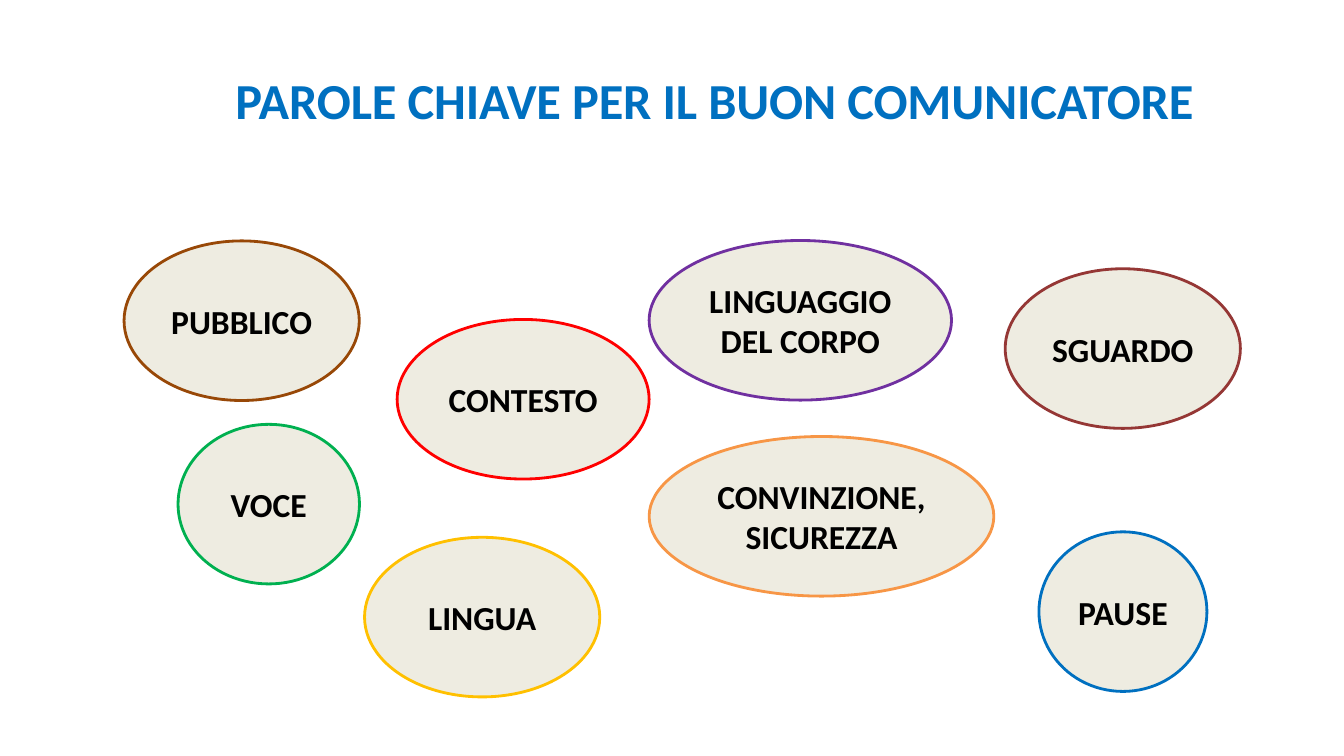
from dataclasses import dataclass

from pptx import Presentation
from pptx.dml.color import RGBColor
from pptx.enum.shapes import MSO_SHAPE
from pptx.enum.text import MSO_ANCHOR, MSO_AUTO_SIZE, PP_ALIGN
from pptx.util import Pt


@dataclass(frozen=True)
class Theme:
    font: str = "Calibri"
    title_size: int = 36
    keyword_size: int = 24
    outline_width: int = 2
    title_color: str = "0070C0"
    keyword_color: str = "000000"
    bubble_fill: str = "EEECE1"


THEME = Theme()
BUBBLE_HEIGHT = 114
KEYWORDS = [
    ("PUBBLICO", 88.6, 172.1, 168, "984807"),
    ("CONTESTO", 283.7, 228.2, 180, "FF0000"),
    ("VOCE", 127.2, 303.1, 129.6, "00B050"),
    ("LINGUAGGIO DEL CORPO", 463.7, 171.8, 216, "7030A0"),
    ("LINGUA", 260.4, 383.8, 168, "FFC000"),
    ("PAUSE", 742.1, 379.9, 120, "0070C0"),
    ("CONVINZIONE, SICUREZZA", 463.7, 311.8, 246.2, "F79646"),
    ("SGUARDO", 718, 192, 168, "953735"),
]


def apply_format(target, values):
    for name, value in values.items():
        setattr(target, name, value)


def write_text(frame, text, size, color, frame_format, space_before=0):
    apply_format(frame, {"word_wrap": True, **frame_format})
    para = frame.paragraphs[0]
    apply_format(para, {
        "alignment": PP_ALIGN.CENTER,
        "space_before": Pt(space_before),
    })
    span = para.add_run()
    span.text = text
    apply_format(span.font, {"name": THEME.font, "size": Pt(size), "bold": True})
    span.font.color.rgb = RGBColor.from_string(color)
    return span


def add_title(page, text):
    title = page.shapes.title
    apply_format(title, {
        "left": Pt(96), "top": Pt(48.5), "width": Pt(828), "height": Pt(88.6),
    })
    span = write_text(title.text_frame, text, THEME.title_size, THEME.title_color, {
        "vertical_anchor": MSO_ANCHOR.TOP,
        "auto_size": MSO_AUTO_SIZE.NONE,
        "margin_left": Pt(0.7),
        "margin_top": Pt(0.9),
        "margin_right": Pt(0),
        "margin_bottom": Pt(0),
    }, space_before=1.1)
    span._r.get_or_add_rPr().set("spc", "-10")


def add_bubble(page, text, left, top, width, outline):
    bubble = page.shapes.add_shape(
        MSO_SHAPE.OVAL, Pt(left), Pt(top), Pt(width), Pt(BUBBLE_HEIGHT))
    bubble.shadow.inherit = False
    bubble.fill.solid()
    bubble.fill.fore_color.rgb = RGBColor.from_string(THEME.bubble_fill)
    bubble.line.color.rgb = RGBColor.from_string(outline)
    bubble.line.width = Pt(THEME.outline_width)
    write_text(bubble.text_frame, text, THEME.keyword_size, THEME.keyword_color, {
        "vertical_anchor": MSO_ANCHOR.MIDDLE,
    })


def main():
    deck = Presentation()
    apply_format(deck, {"slide_width": Pt(960), "slide_height": Pt(540)})
    page = deck.slides.add_slide(deck.slide_layouts.get_by_name("Title Only"))
    add_title(page, "PAROLE CHIAVE PER IL BUON COMUNICATORE")
    for keyword in KEYWORDS:
        add_bubble(page, *keyword)
    deck.save("out.pptx")


if __name__ == "__main__":
    main()
